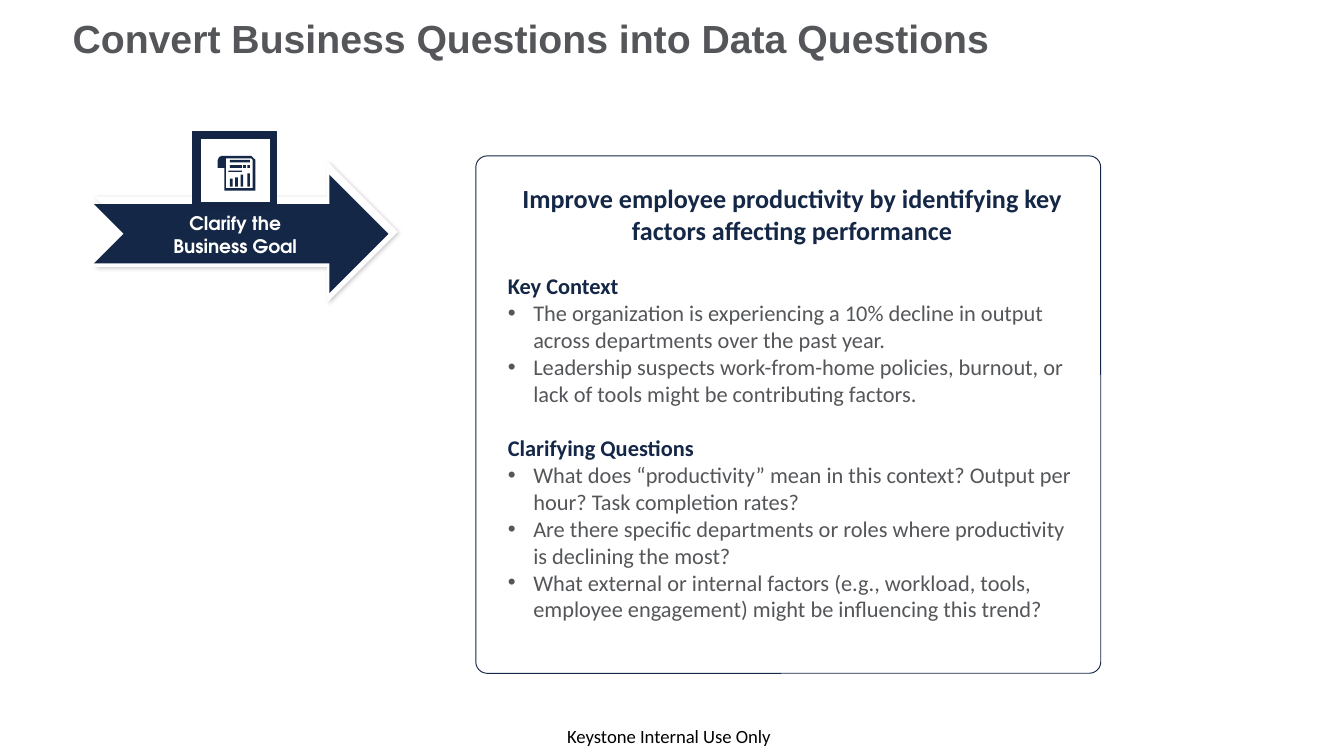
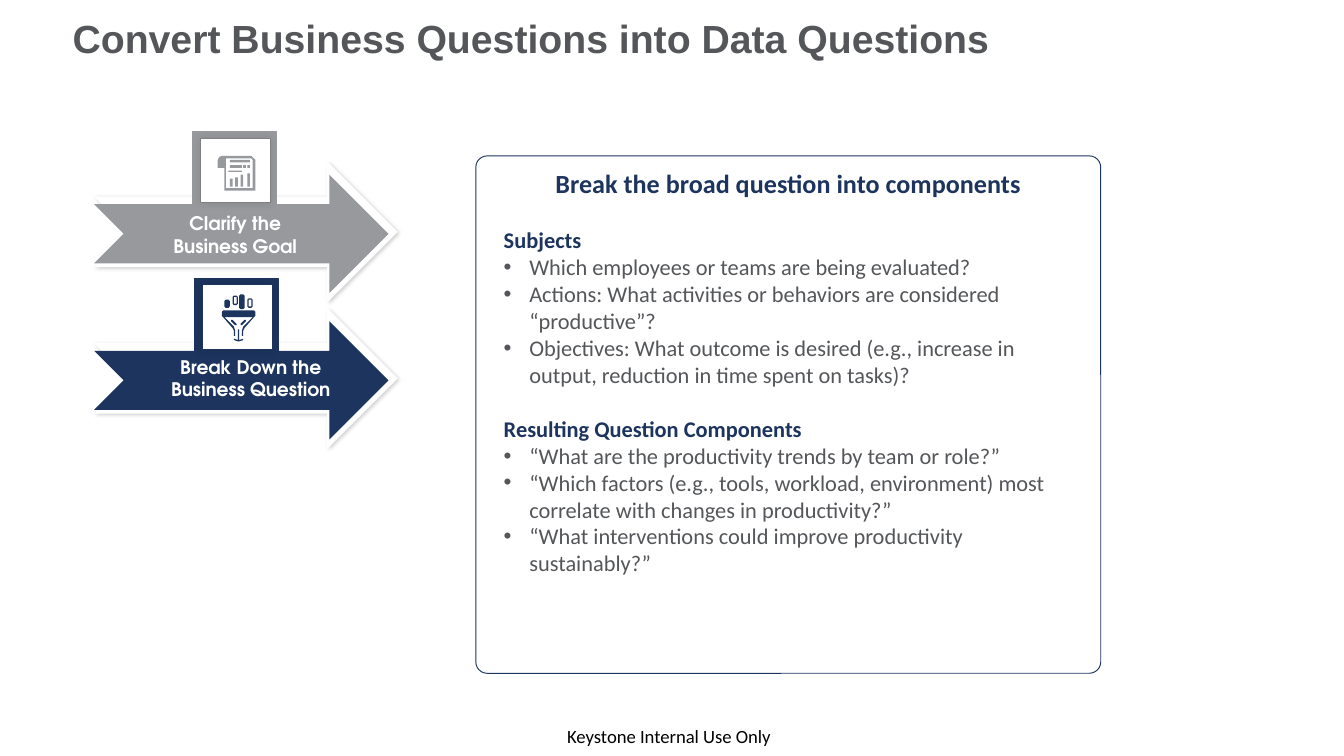
from lxml import etree
from pptx import Presentation
from pptx import util as u
from pptx.dml.color import RGBColor
from pptx.enum import shapes, text
from pptx.oxml.ns import qn

WHITE = RGBColor(0xFF, 0xFF, 0xFF)
BLACK = RGBColor(0, 0, 0)
SLATE = RGBColor(0x54, 0x56, 0x59)
GREY = RGBColor(0x97, 0x99, 0x9D)
EDGE_GREY = RGBColor(0x80, 0x80, 0x80)
NAVY = RGBColor(0x15, 0x27, 0x46)
BLUE = RGBColor(0x1C, 0x34, 0x5E)

BODY_FONT, TITLE_FONT, STEP_FONT = "Calibri", "Arial", "TeX Gyre Adventor"
SLIDE_WIDTH, SLIDE_HEIGHT = u.Pt(720), u.Pt(405)  # 16:9
CELL = SLIDE_WIDTH // 100  # side of a grid cell: 100 columns across the slide
ICON_UNIT = CELL // 10
STEP_ROWS = 10.9  # distance from one step arrow to the next
BULLET_INDENT = u.Inches(0.19)

PANELS = [
    {
        "color": NAVY,
        "text_box": (36.8, 13.1, 44.3, 36),
        "heading": "Improve employee productivity by identifying key factors affecting performance",
        "sections": {
            "Key Context": [
                "The organization is experiencing a 10% decline in output across departments over the past year.",
                "Leadership suspects work-from-home policies, burnout, or lack of tools might be contributing factors.",
            ],
            "Clarifying Questions": [
                "What does “productivity” mean in this context? Output per hour? Task completion rates?",
                "Are there specific departments or roles where productivity is declining the most?",
                "What external or internal factors (e.g., workload, tools, employee engagement) "
                "might be influencing this trend?",
            ],
        },
    },
    {
        "color": BLUE,
        "text_box": (36.5, 12, 44.3, 31.6),
        "heading": "Break the broad question into components",
        "sections": {
            "Subjects": [
                "Which employees or teams are being evaluated?",
                "Actions: What activities or behaviors are considered “productive”?",
                "Objectives: What outcome is desired (e.g., increase in output, reduction in time spent on tasks)?",
            ],
            "Resulting Question Components": [
                "“What are the productivity trends by team or role?”",
                "“Which factors (e.g., tools, workload, environment) most correlate with changes in productivity?”",
                "“What interventions could improve productivity sustainably?”",
            ],
        },
    },
]


def cells(*counts):
    return [round(count * CELL) for count in counts]


def box(left, top, right, bottom):
    return [(left, top), (right, top), (right, bottom), (left, bottom)]


def capsule(left, top, right, bottom):
    return [(left + 1, top), (right - 1, top), (right, top + 1), (right, bottom - 1),
            (right - 1, bottom), (left + 1, bottom), (left, bottom - 1), (left, top + 1)]


def mirrored(outline, width):
    return [(width - x, y) for x, y in outline]


def report_icon():
    """Outlines of a scroll with text lines and a column chart."""
    scroll = [(3, 0), (25, 0), (28, 3), (28, 26), (5, 26), (5, 9), (0, 9), (0, 3), (1, 1)]
    page = [(6, 2), (25, 2), (26, 3), (26, 24), (6, 24)]
    lines = [box(9, 3, 24, 5), box(9, 7, 18, 9), box(19, 7, 21, 9),
             box(22, 7, 24, 9), box(8, 11, 18, 12)]
    columns = [box(left, top, left + 2, 23)
               for left, top in ((9, 17), (13, 16), (17, 14), (22, 13))]
    return [scroll, page, *lines, *columns]


def funnel_icon():
    """Outlines of four capsules falling into a funnel."""
    wall = [(1, 17), (2, 17), (9, 24), (10, 27), (10, 31), (9, 31), (9, 27), (8, 25)]
    dash = [(7, 19), (8, 19), (11, 22), (11, 23), (10, 23), (7, 20)]
    arrow = [(12, 26), (13, 26), (13, 34), (16, 33), (16, 34),
             (13, 35), (12, 35), (9, 34), (9, 33), (12, 34)]
    solid = [capsule(2, 4, 6, 10), capsule(13, 0, 17, 11)]
    hollow = [capsule(8, 1, 12, 8), box(9, 2, 11, 7), capsule(19, 3, 23, 10), box(20, 4, 22, 9)]
    return [capsule(0, 12, 25, 17), *solid, *hollow, arrow,
            wall, mirrored(wall, 25), dash, mirrored(dash, 25)]


def paint(shape, fill, line=None):
    shape.shadow.inherit = False
    shape.fill.solid()
    shape.fill.fore_color.rgb = fill
    if line is None:
        shape.line.fill.background()
    else:
        shape.line.color.rgb = line
        shape.line.width = u.Pt(0.5)


def add_shadow(shape, opacity, blur, distance=0, angle=0):
    effects = shape._element.spPr.find(qn("a:effectLst"))
    shadow = etree.SubElement(effects, qn("a:outerShdw"), blurRad=str(u.Pt(blur)),
                              dist=str(u.Pt(distance)), dir=str(angle * 60000),
                              algn="ctr", rotWithShape="0")
    color = etree.SubElement(shadow, qn("a:srgbClr"), val=str(BLACK))
    etree.SubElement(color, qn("a:alpha"), val=str(opacity * 1000))


def add_block(slide, kind, place, fill, line=None):
    shape = slide.shapes.add_shape(kind, *cells(*place))
    paint(shape, fill, line)
    return shape


def add_icon(slide, left, top, outlines, color):
    first, *others = outlines
    builder = slide.shapes.build_freeform(*first[0], scale=ICON_UNIT)
    builder.add_line_segments(first[1:], close=True)
    for outline in others:
        builder.move_to(*outline[0])
        builder.add_line_segments(outline[1:], close=True)
    paint(builder.convert_to_shape(*cells(left, top)), color)


def add_frame(slide, place, side_inset=1, end_inset=0.5, anchor=text.MSO_ANCHOR.TOP):
    frame = slide.shapes.add_textbox(*cells(*place)).text_frame
    frame.word_wrap = True
    frame.vertical_anchor = anchor
    frame.margin_left, frame.margin_top = cells(side_inset, end_inset)
    frame.margin_right, frame.margin_bottom = frame.margin_left, frame.margin_top
    return frame


def write(frame, words, size, color, font=BODY_FONT, bold=False, align=text.PP_ALIGN.LEFT):
    """Fill the frame's first paragraph, or add one after the last."""
    paragraph = frame.paragraphs[0] if not frame.text else frame.add_paragraph()
    paragraph.text = words
    paragraph.alignment = align
    paragraph.font.name = font
    paragraph.font.size = u.Pt(size)
    paragraph.font.bold = bold
    paragraph.font.color.rgb = color
    return paragraph


def add_bullet(paragraph):
    properties = paragraph._p.get_or_add_pPr()
    properties.set("marL", str(BULLET_INDENT))
    properties.set("indent", str(-BULLET_INDENT))
    bullet_font = etree.Element(qn("a:buFont"), typeface="Arial")
    bullet = etree.Element(qn("a:buChar"), char="•")
    properties.insert(0, bullet_font)
    bullet_font.addnext(bullet)


def add_slide(presentation):
    """Blank slide with the shared title and footer."""
    slide = presentation.slides.add_slide(presentation.slide_layouts[6])
    footer = add_frame(slide, (42.2, 53.9, 15.8, 1.7), 0, 0)
    write(footer, "Keystone Internal Use Only", 10, BLACK)
    title = add_frame(slide, (5.4, 1, 94.6, 4.9), side_inset=0)
    write(title, "Convert Business Questions into Data Questions", 21, SLATE,
          TITLE_FONT, bold=True).line_spacing = 0.9
    return slide


def add_panel(slide, panel):
    color = panel["color"]
    card = add_block(slide, shapes.MSO_SHAPE.ROUNDED_RECTANGLE, (35.4, 11.6, 46.5, 38.5), WHITE, color)
    card.adjustments[0] = 0.022
    frame = add_frame(slide, panel["text_box"])
    write(frame, panel["heading"], 14, color, bold=True, align=text.PP_ALIGN.CENTER)
    for section, points in panel["sections"].items():
        write(frame, section, 12, color, bold=True).space_before = u.Pt(14.6)
        for point in points:
            add_bullet(write(frame, point, 12, SLATE))


def add_step(slide, top, color, edge, label, label_place, tile_left, icon, icon_place):
    """Step arrow with its label and icon tile; rows count from the arrow's top."""
    arrow = shapes.MSO_SHAPE.NOTCHED_RIGHT_ARROW
    tile = shapes.MSO_SHAPE.RECTANGLE
    add_shadow(add_block(slide, arrow, (7, top, 22.6, 10.5), WHITE), 20, 2, 1, 45)
    add_block(slide, arrow, (7, top + 1, 21.9, 8.8), color)
    left, row, width = label_place
    frame = add_frame(slide, (left, top + row, width, 4.4), anchor=text.MSO_ANCHOR.MIDDLE)
    write(frame, label, 10, WHITE, STEP_FONT, bold=True, align=text.PP_ALIGN.CENTER)
    add_block(slide, tile, (tile_left, top - 2.2, 6.2, 5.6), color, color)
    add_shadow(add_block(slide, tile, (tile_left + 0.55, top - 1.7, 5.2, 4.8), WHITE, edge), 10, 5)
    column, row = icon_place
    add_icon(slide, column, top + row, icon, color)


def add_goal_step(slide, color, edge):
    add_step(slide, 12, color, edge, "Clarify the Business Goal", (11, 3.25, 13),
             14.35, report_icon(), (16.2, -0.4))


def add_question_step(slide, color):
    add_step(slide, 12 + STEP_ROWS, color, color, "Break Down the Business Question",
             (10.4, 3.05, 16.5), 14.5, funnel_icon(), (16.5, -1))


def main():
    presentation = Presentation()
    presentation.slide_width = SLIDE_WIDTH
    presentation.slide_height = SLIDE_HEIGHT

    goal_panel, question_panel = PANELS
    goal_slide = add_slide(presentation)
    add_panel(goal_slide, goal_panel)
    add_goal_step(goal_slide, NAVY, NAVY)

    question_slide = add_slide(presentation)
    add_panel(question_slide, question_panel)
    add_goal_step(question_slide, GREY, EDGE_GREY)
    add_question_step(question_slide, BLUE)

    presentation.save("out.pptx")


if __name__ == "__main__":
    main()
